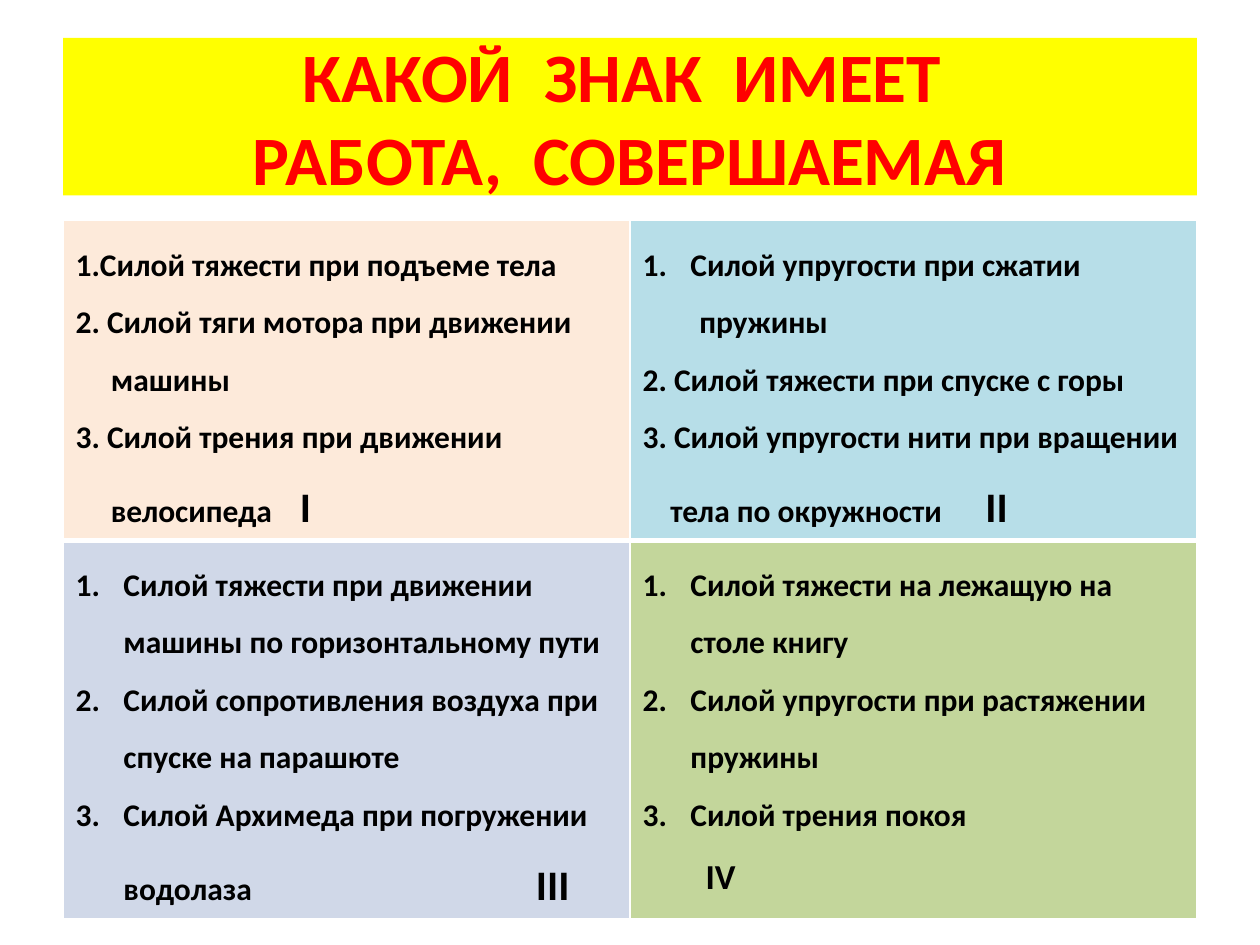
import dataclasses

import pptx
import pptx.dml.color
import pptx.enum.text
import pptx.oxml
import pptx.oxml.ns
import pptx.util
from pptx.util import Inches


@dataclasses.dataclass(frozen=True)
class Theme:
    font: str = "Calibri"
    title_size: float = 39.6
    body_size: float = 18
    title_fill: str = "FFFF00"
    title_color: str = "FF0000"
    text_color: str = "000000"
    border_color: str = "FFFFFF"
    fills: tuple = (("FDEADA", "B7DEE8"), ("D0D8E8", "C3D69B"))


@dataclasses.dataclass
class Line:
    text: str
    margin: float = 0
    numbered: bool = False
    numeral: str = ""
    numeral_size: float = 24


HANGING = 0.38
NUMERAL_EDGE = 4.04

TITLE = "КАКОЙ  ЗНАК  ИМЕЕТ \vРАБОТА,  СОВЕРШАЕМАЯ"
QUADRANTS = (
    (
        (
            Line("1.Силой тяжести при подъеме тела"),
            Line("2. Силой тяги мотора при движении"),
            Line("машины", 0.28),
            Line("3. Силой трения при движении"),
            Line("велосипеда", 0.28, numeral="I"),
        ),
        (
            Line("Силой упругости при сжатии", numbered=True),
            Line("пружины", 0.45),
            Line("2. Силой тяжести при спуске с горы"),
            Line("3. Силой упругости нити при вращении"),
            Line("тела по окружности", 0.22, numeral="II"),
        ),
    ),
    (
        (
            Line("Силой тяжести при движении машины по горизонтальному пути", numbered=True),
            Line("Силой сопротивления воздуха при спуске на парашюте", numbered=True),
            Line("Силой Архимеда при погружении водолаза", numbered=True, numeral="III"),
        ),
        (
            Line("Силой тяжести на лежащую на столе книгу", numbered=True),
            Line("Силой упругости при растяжении пружины", numbered=True),
            Line("Силой трения покоя", numbered=True),
            Line("", numeral="IV", numeral_size=20),
        ),
    ),
)


class SlideBuilder:
    """Draws styled elements on the current slide."""

    def __init__(self, deck, theme):
        self.theme = theme
        self.page = deck.slides.add_slide(deck.slide_layouts[5])

    def color(self, value):
        return pptx.dml.color.RGBColor.from_string(value)

    def style(self, span, size, color):
        span.font.name = self.theme.font
        span.font.size = pptx.util.Pt(size)
        span.font.bold = True
        span.font.color.rgb = self.color(color)

    def fill(self, item, color):
        item.fill.solid()
        item.fill.fore_color.rgb = self.color(color)

    def child(self, parent, tag, **attributes):
        element = pptx.oxml.ns.qn(tag)
        node = parent.makeelement(element, {key: str(value) for key, value in attributes.items()})
        parent.append(node)
        return node

    def title(self, text, left, top, width, height):
        box = self.page.shapes.title
        box.left, box.top, box.width, box.height = map(Inches, (left, top, width, height))
        self.fill(box, self.theme.title_fill)
        frame = box.text_frame
        frame.text = text
        frame.auto_size = pptx.enum.text.MSO_AUTO_SIZE.NONE
        frame.vertical_anchor = pptx.enum.text.MSO_ANCHOR.MIDDLE
        para = frame.paragraphs[0]
        para.alignment = pptx.enum.text.PP_ALIGN.CENTER
        for span in para.runs:
            self.style(span, self.theme.title_size, self.theme.title_color)

    def paragraph(self, para, line):
        para.text = line.text
        para.line_spacing = 1.5
        for span in para.runs:
            self.style(span, self.theme.body_size, self.theme.text_color)
        settings = para._p.get_or_add_pPr()
        margin = HANGING if line.numbered else line.margin
        settings.set("marL", str(Inches(margin)))
        settings.set("indent", str(-Inches(margin) if line.numbered else 0))
        if line.numbered:
            self.child(settings, "a:buFont", typeface="+mj-lt")
            self.child(settings, "a:buAutoNum", type="arabicPeriod")
        else:
            self.child(settings, "a:buNone")
        if line.numeral:
            stops = self.child(settings, "a:tabLst")
            self.child(stops, "a:tab", pos=Inches(NUMERAL_EDGE), algn="r")
            span = para.add_run()
            span.text = "\t" + line.numeral
            self.style(span, line.numeral_size, self.theme.text_color)

    def borders(self, cell, bottom):
        settings = cell._tc.get_or_add_tcPr()
        widths = {"a:lnL": 1, "a:lnR": 1, "a:lnT": 1, "a:lnB": bottom}
        for position, (tag, width) in enumerate(widths.items()):
            edge = self.child(settings, tag, w=pptx.util.Pt(width))
            paint = self.child(edge, "a:solidFill")
            self.child(paint, "a:srgbClr", val=self.theme.border_color)
            settings.insert(position, edge)

    def table(self, content, left, top, widths, heights):
        frame = self.page.shapes.add_table(
            len(heights), len(widths), Inches(left), Inches(top),
            Inches(sum(widths)), Inches(sum(heights)))
        grid = frame.table
        grid.first_row = grid.horz_banding = False
        for column, width in zip(grid.columns, widths):
            column.width = Inches(width)
        for row_index, (row, height) in enumerate(zip(grid.rows, heights)):
            row.height = Inches(height)
            for column_index, cell in enumerate(row.cells):
                self.fill(cell, self.theme.fills[row_index][column_index])
                self.borders(cell, 3 if row_index == 0 else 1)
                frame = cell.text_frame
                for index, line in enumerate(content[row_index][column_index]):
                    para = frame.add_paragraph() if index else frame.paragraphs[0]
                    self.paragraph(para, line)


def main():
    deck = pptx.Presentation()
    deck.slide_width, deck.slide_height = Inches(10), Inches(7.5)
    builder = SlideBuilder(deck, Theme())
    builder.title(TITLE, 0.5, 0.3, 9, 1.25)
    builder.table(QUADRANTS, 0.5, 1.75, (4.5, 4.5), (2.47, 2.6))
    deck.save("out.pptx")


if __name__ == "__main__":
    main()
